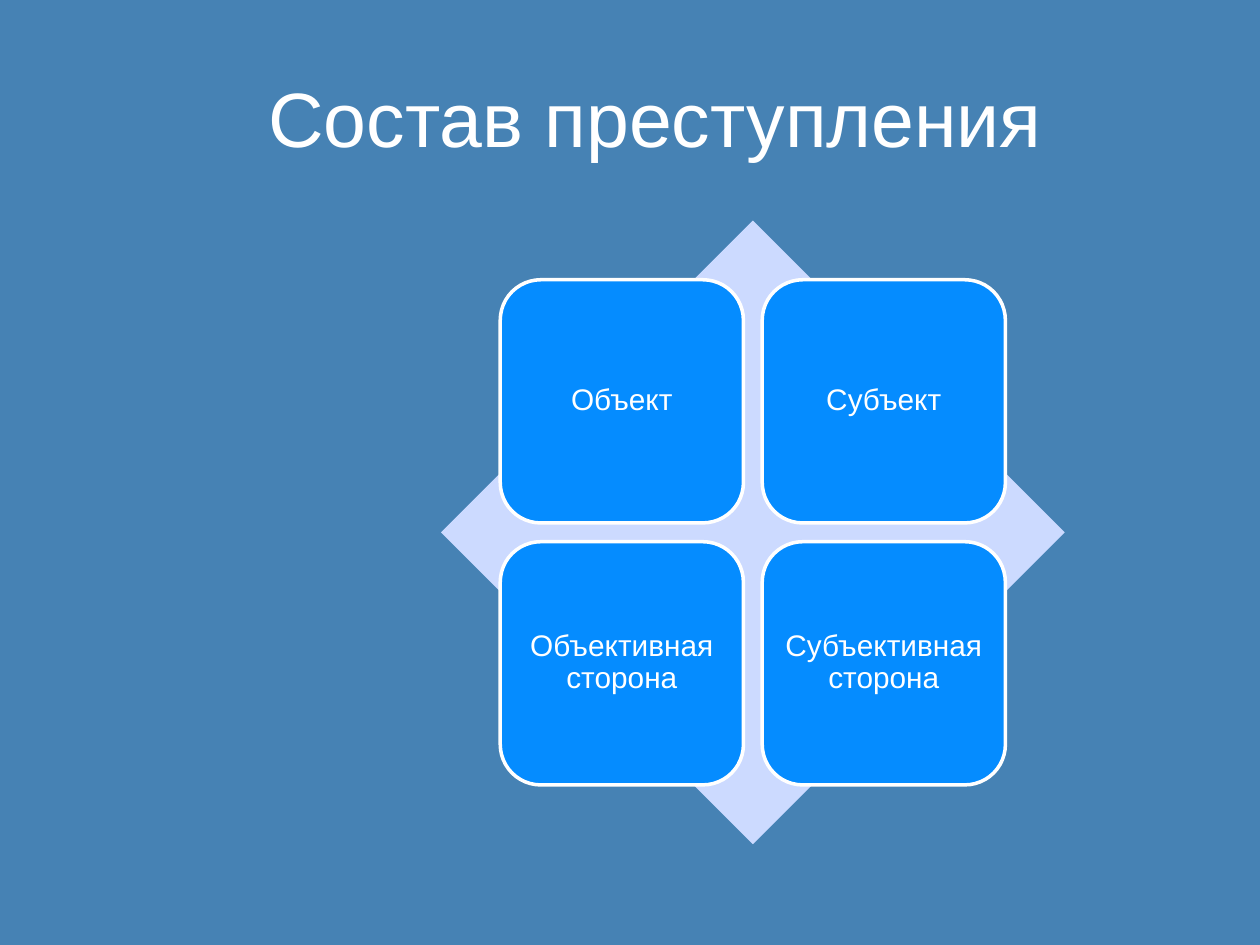
from pptx import Presentation
from pptx.dml.color import RGBColor
from pptx.enum.shapes import MSO_SHAPE
from pptx.enum.text import MSO_ANCHOR, PP_ALIGN
from pptx.util import Inches, Pt

BACKGROUND = RGBColor(0x46, 0x82, 0xB4)
DIAMOND = RGBColor(0xCC, 0xDA, 0xFF)
TILE = RGBColor(0x05, 0x8C, 0xFF)
WHITE = RGBColor(0xFF, 0xFF, 0xFF)
FONT = "Arial"
ELEMENTS = [
    ["Объект", "Субъект"],
    ["Объективная сторона", "Субъективная сторона"],
]


def format_text(frame, size, align):
    frame.word_wrap = True
    frame.vertical_anchor = MSO_ANCHOR.MIDDLE
    para = frame.paragraphs[0]
    para.alignment = align
    for span in para.runs:
        span.font.name = FONT
        span.font.size = Pt(size)
        span.font.color.rgb = WHITE


def add_title(page, text, left, top, width, height):
    title = page.shapes.title
    title.left, title.top = Inches(left), Inches(top)
    title.width, title.height = Inches(width), Inches(height)
    title.text_frame.text = text
    format_text(title.text_frame, 44, PP_ALIGN.LEFT)


def add_panel(page, kind, left, top, size, color):
    panel = page.shapes.add_shape(
        kind, Inches(left), Inches(top), Inches(size), Inches(size))
    panel.shadow.inherit = False
    panel.fill.solid()
    panel.fill.fore_color.rgb = color
    return panel


def add_tile(page, text, left, top, size):
    tile = add_panel(page, MSO_SHAPE.ROUNDED_RECTANGLE, left, top, size, TILE)
    tile.line.color.rgb = WHITE
    tile.line.width = Pt(2)
    frame = tile.text_frame
    frame.margin_left = frame.margin_right = Inches(0.02)
    frame.margin_top = frame.margin_bottom = Inches(0.07)
    frame.text = text
    format_text(frame, 17, PP_ALIGN.CENTER)
    frame.paragraphs[0].line_spacing = 0.9


def add_matrix(page, left, top, size):
    diamond = add_panel(page, MSO_SHAPE.DIAMOND, left, top, size, DIAMOND)
    diamond.line.fill.background()
    inset = size * 0.095
    tile_size = size * 0.39
    step = size - 2 * inset - tile_size
    for row, names in enumerate(ELEMENTS):
        for column, name in enumerate(names):
            add_tile(page, name, left + inset + column * step,
                     top + inset + row * step, tile_size)


def main():
    deck = Presentation()
    deck.slide_width, deck.slide_height = Inches(10), Inches(7.5)
    page = deck.slides.add_slide(deck.slide_layouts[5])
    page.background.fill.solid()
    page.background.fill.fore_color.rgb = BACKGROUND
    add_title(page, "Состав преступления", 2.03, 0.3, 7.89, 1.25)
    add_matrix(page, 3.5, 1.75, 4.95)
    deck.save("out.pptx")


if __name__ == "__main__":
    main()
